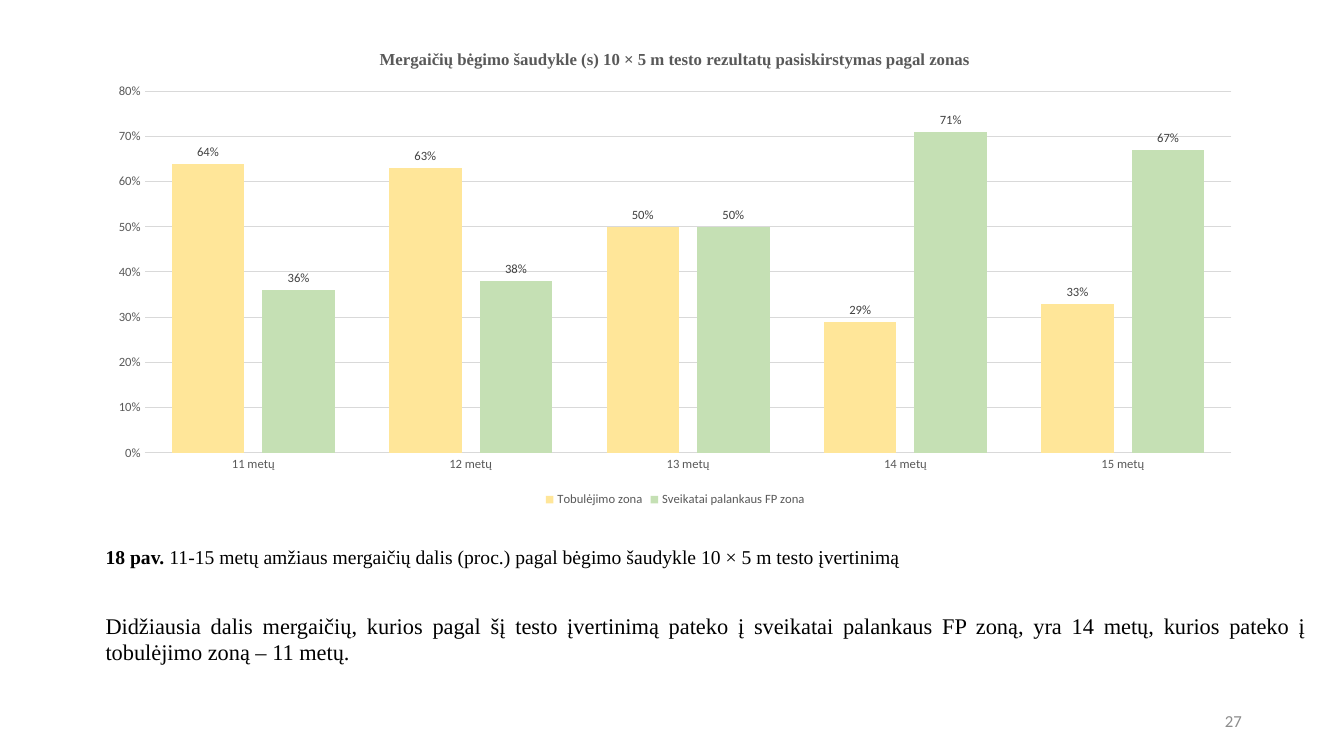
import pptx
import pptx.chart.data
import pptx.dml.color
import pptx.enum.chart
import pptx.enum.text
import pptx.util
from dataclasses import dataclass

Cm = pptx.util.Cm
ALIGN = pptx.enum.text.PP_ALIGN
ANCHOR = pptx.enum.text.MSO_ANCHOR


@dataclass(frozen=True)
class Theme:
    """Hold the colours, fonts and type sizes of the slide."""
    ink: str = "000000"
    axis_text: str = "595959"
    label_text: str = "404040"
    number_text: str = "8C8C8C"
    grid: str = "D9D9D9"
    improvement: str = "FFE699"
    healthy: str = "C5E0B4"
    serif: str = "Times New Roman"
    sans: str = "Calibri"
    chart_size: float = 9
    small_size: float = 12
    caption_size: float = 14
    body_size: float = 16


THEME = Theme()
LEFT = Cm(2.41)
CONTENT_WIDTH = Cm(29.21)


def rgb(colour):
    """Turn a hex string into a colour."""
    return pptx.dml.color.RGBColor.from_string(colour)


def format_font(font, size, colour, name=THEME.sans, bold=False):
    """Set the face, size, colour and weight of a font."""
    font.name = name
    font.size = pptx.util.Pt(size)
    font.bold = bold
    font.color.rgb = rgb(colour)


def write_text(frame, text, *, size, colour=THEME.ink, name=THEME.serif,
               bold=False, align=None, spacing=None):
    """Append a formatted run to the first paragraph of a text frame."""
    paragraph = frame.paragraphs[0]
    if align is not None:
        paragraph.alignment = align
    if spacing is not None:
        paragraph.line_spacing = spacing
    run = paragraph.add_run()
    run.text = text
    format_font(run.font, size, colour, name, bold)


def add_text_frame(slide, left, top, width, height, anchor=ANCHOR.TOP):
    """Add a wrapping text box and return its frame."""
    frame = slide.shapes.add_textbox(left, top, width, height).text_frame
    frame.word_wrap = True
    frame.vertical_anchor = anchor
    return frame


def style_line(line):
    """Give a chart line the thin grid style."""
    line.color.rgb = rgb(THEME.grid)
    line.width = pptx.util.Pt(0.75)


def style_axes(chart):
    """Format the category and value axes."""
    category_axis, value_axis = chart.category_axis, chart.value_axis
    for axis in (category_axis, value_axis):
        axis.major_tick_mark = pptx.enum.chart.XL_TICK_MARK.NONE
        axis.minor_tick_mark = pptx.enum.chart.XL_TICK_MARK.NONE
        format_font(axis.tick_labels.font, THEME.chart_size, THEME.axis_text)
    style_line(category_axis.format.line)
    value_axis.format.line.fill.background()
    value_axis.has_major_gridlines = True
    style_line(value_axis.major_gridlines.format.line)
    value_axis.minimum_scale = 0
    value_axis.maximum_scale = 0.8
    value_axis.major_unit = 0.1
    value_axis.tick_labels.number_format = "0%"
    value_axis.tick_labels.number_format_is_linked = False


def style_series(series, colour):
    """Colour one series and label its columns."""
    series.format.fill.solid()
    series.format.fill.fore_color.rgb = rgb(colour)
    series.invert_if_negative = False
    labels = series.data_labels
    labels.show_value = True
    labels.position = pptx.enum.chart.XL_LABEL_POSITION.OUTSIDE_END
    labels.number_format = "0%"
    labels.number_format_is_linked = False
    format_font(labels.font, THEME.chart_size, THEME.label_text)


def add_zone_chart(slide):
    """Add the column chart of girls by age and zone."""
    data = pptx.chart.data.CategoryChartData(number_format="0%")
    data.categories = [f"{age} metų" for age in range(11, 16)]
    data.add_series("Tobulėjimo zona", (0.64, 0.63, 0.5, 0.29, 0.33))
    data.add_series("Sveikatai palankaus FP zona", (0.36, 0.38, 0.5, 0.71, 0.67))
    chart = slide.shapes.add_chart(
        pptx.enum.chart.XL_CHART_TYPE.COLUMN_CLUSTERED,
        LEFT, Cm(0.79), CONTENT_WIDTH, Cm(12.09), data).chart
    format_font(chart.font, 10, THEME.ink)
    chart.has_title = True
    write_text(chart.chart_title.text_frame,
               "Mergaičių bėgimo šaudykle (s) 10 × 5 m testo rezultatų pasiskirstymas pagal zonas",
               size=THEME.small_size, colour=THEME.axis_text, bold=True)
    chart.chart_title.include_in_layout = False
    chart.has_legend = True
    chart.legend.position = pptx.enum.chart.XL_LEGEND_POSITION.BOTTOM
    chart.legend.include_in_layout = False
    format_font(chart.legend.font, THEME.chart_size, THEME.axis_text)
    style_axes(chart)
    plot = chart.plots[0]
    plot.gap_width = 75
    plot.overlap = -25
    plot.vary_by_categories = False
    for series, colour in zip(plot.series, (THEME.improvement, THEME.healthy)):
        style_series(series, colour)


def main():
    """Build and save the slide."""
    presentation = pptx.Presentation()
    presentation.slide_width = Cm(33.87)
    presentation.slide_height = Cm(19.05)
    slide = presentation.slides.add_slide(presentation.slide_layouts[6])
    add_zone_chart(slide)

    caption = add_text_frame(slide, LEFT, Cm(13.64), CONTENT_WIDTH, Cm(0.86), ANCHOR.MIDDLE)
    write_text(caption, "18 pav. ", size=THEME.caption_size, bold=True, spacing=0.9)
    write_text(caption,
               "11-15 metų amžiaus mergaičių dalis (proc.) pagal bėgimo šaudykle 10 × 5 m testo įvertinimą",
               size=THEME.caption_size)

    finding = add_text_frame(slide, LEFT, Cm(15.29), Cm(30.76), Cm(1.63))
    write_text(finding,
               "Didžiausia dalis mergaičių, kurios pagal šį testo įvertinimą pateko į sveikatai "
               "palankaus FP zoną, yra 14 metų, kurios pateko į tobulėjimo zoną – 11 metų.",
               size=THEME.body_size, align=ALIGN.JUSTIFY)

    number = add_text_frame(slide, Cm(23.93), Cm(17.65), Cm(7.62), Cm(1.02), ANCHOR.MIDDLE)
    write_text(number, "27", size=THEME.small_size, colour=THEME.number_text,
               name=THEME.sans, align=ALIGN.RIGHT)
    presentation.save("out.pptx")


if __name__ == "__main__":
    main()
